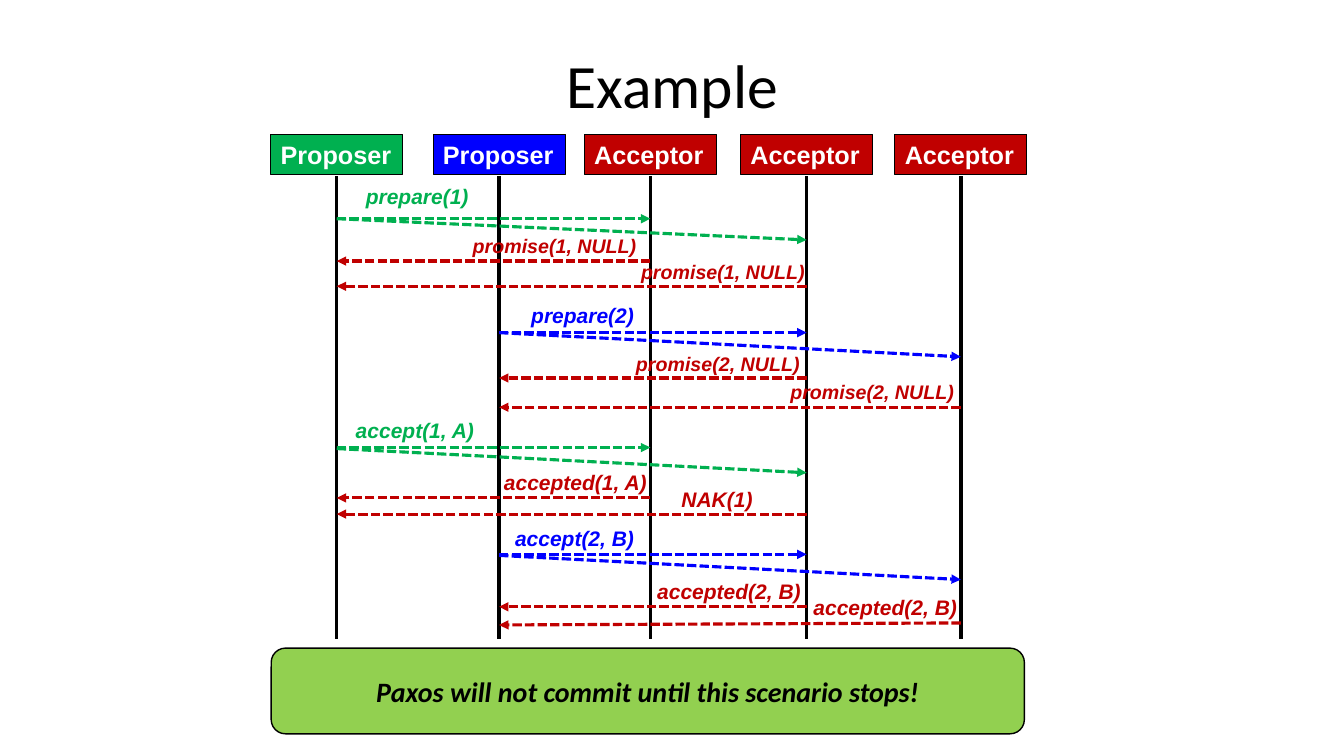
from dataclasses import dataclass

from lxml.etree import SubElement
from pptx import Presentation
from pptx.dml.color import RGBColor
from pptx.enum.dml import MSO_LINE
from pptx.enum.shapes import MSO_CONNECTOR, MSO_SHAPE
from pptx.enum.text import MSO_ANCHOR, MSO_AUTO_SIZE, PP_ALIGN
from pptx.oxml.ns import qn
from pptx.shapes.autoshape import Shape
from pptx.shapes.connector import Connector
from pptx.util import Inches, Pt

COLORS = {
    "black": "000000",
    "white": "FFFFFF",
    "green": "00B050",
    "blue": "0000FF",
    "red": "C00000",
    "lime": "92D050",
}
CELL = Inches(0.1)
HEADER_TOP, HEADER_WIDTH, HEADER_HEIGHT = 13.3, 13.1, 4
LIFELINE_TOP, LIFELINE_BOTTOM = 17.5, 63.4
CAPTION_HEIGHT = 3.5


@dataclass(frozen=True)
class Lane:
    role: str
    color: str
    column: float


@dataclass(frozen=True)
class Message:
    sender: int
    receiver: int
    row: float
    color: str
    drop: float = 0


@dataclass(frozen=True)
class Caption:
    text: str
    color: str
    column: float
    row: float
    width: float
    size: float = 15


LANES = [
    Lane("Proposer", "green", 33.4),
    Lane("Proposer", "blue", 49.5),
    Lane("Acceptor", "red", 64.5),
    Lane("Acceptor", "red", 80),
    Lane("Acceptor", "red", 95.3),
]
MESSAGES = [
    Message(0, 2, 21.7, "green"),
    Message(0, 3, 21.7, "green", 2.1),
    Message(2, 0, 25.9, "red"),
    Message(3, 0, 28.4, "red"),
    Message(1, 3, 33, "blue"),
    Message(1, 4, 33, "blue", 2.4),
    Message(3, 1, 37.5, "red"),
    Message(4, 1, 40.4, "red"),
    Message(0, 2, 44.4, "green"),
    Message(0, 3, 44.5, "green", 2.4),
    Message(2, 0, 49.4, "red"),
    Message(3, 0, 51, "red"),
    Message(1, 3, 55, "blue"),
    Message(1, 4, 55.1, "blue", 2.4),
    Message(3, 1, 60.2, "red"),
    Message(4, 1, 61.8, "red", 0.2),
]
CAPTIONS = [
    Caption("prepare(1)", "green", 35.3, 17.7, 12.9),
    Caption("promise(1, NULL)", "red", 45.9, 22.7, 18.3, 14),
    Caption("promise(1, NULL)", "red", 62.6, 25.3, 18.3, 14),
    Caption("prepare(2)", "blue", 51.7, 29.5, 12.9),
    Caption("promise(2, NULL)", "red", 62.1, 34.4, 18.3, 14),
    Caption("promise(2, NULL)", "red", 77.4, 37.2, 18.3, 14),
    Caption("accept(1, A)", "green", 34.3, 40.9, 13.9),
    Caption("accepted(1, A)", "red", 49, 46.1, 16.3),
    Caption("NAK(1)", "red", 66.6, 47.8, 9.2),
    Caption("accept(2, B)", "blue", 50.1, 51.6, 14),
    Caption("accepted(2, B)", "red", 64.2, 56.9, 16.3),
    Caption("accepted(2, B)", "red", 79.7, 58.5, 16.3),
]

deck = Presentation()
deck.slide_width, deck.slide_height = Inches(13.33), Inches(7.5)
page = deck.slides.add_slide(deck.slide_layouts[6])


def cells(*counts: float) -> list[int]:
    return [round(count * CELL) for count in counts]


def rgb(color: str) -> RGBColor:
    return RGBColor.from_string(COLORS[color])


def write(box: Shape, text: str, size: float, color: str, font: str = "Arial",
          bold: bool = True, italic: bool = False, centred: bool = False) -> None:
    frame = box.text_frame
    frame.word_wrap = centred
    frame.auto_size = MSO_AUTO_SIZE.NONE if centred else MSO_AUTO_SIZE.SHAPE_TO_FIT_TEXT
    frame.vertical_anchor = MSO_ANCHOR.MIDDLE if centred else MSO_ANCHOR.TOP
    para = frame.paragraphs[0]
    para.alignment = PP_ALIGN.CENTER if centred else PP_ALIGN.LEFT
    span = para.add_run()
    span.text = text
    span.font.name, span.font.size = font, Pt(size)
    span.font.bold, span.font.italic = bold, italic
    span.font.color.rgb = rgb(color)


def add_panel(kind: MSO_SHAPE, bounds: list[int], fill: str, weight: float) -> Shape:
    panel = page.shapes.add_shape(kind, *bounds)
    panel.shadow.inherit = False
    panel.fill.solid()
    panel.fill.fore_color.rgb = rgb(fill)
    panel.line.color.rgb = rgb("black")
    panel.line.width = Pt(weight)
    return panel


def add_line(ends: list[int], color: str, weight: float) -> Connector:
    line = page.shapes.add_connector(MSO_CONNECTOR.STRAIGHT, *ends)
    line.line.color.rgb = rgb(color)
    line.line.width = Pt(weight)
    SubElement(line._element.spPr, qn("a:effectLst"))
    return line


def draw_lane(lane: Lane) -> None:
    add_line(cells(lane.column, LIFELINE_TOP, lane.column, LIFELINE_BOTTOM), "black", 2.5)
    left = lane.column - HEADER_WIDTH / 2
    bounds = cells(left, HEADER_TOP, HEADER_WIDTH, HEADER_HEIGHT)
    header = add_panel(MSO_SHAPE.RECTANGLE, bounds, lane.color, 0.75)
    write(header, lane.role, 18, "white")


def draw_message(message: Message) -> None:
    start, end = LANES[message.sender].column, LANES[message.receiver].column
    ends = cells(start, message.row, end, message.row + message.drop)
    arrow = add_line(ends, message.color, 2.25)
    arrow.line.dash_style = MSO_LINE.SQUARE_DOT
    SubElement(arrow.line._get_or_add_ln(), qn("a:tailEnd"), type="triangle")


def draw_caption(caption: Caption) -> None:
    bounds = cells(caption.column, caption.row, caption.width, CAPTION_HEIGHT)
    box = page.shapes.add_textbox(*bounds)
    write(box, caption.text, caption.size, caption.color, italic=True)


def main() -> None:
    title = page.shapes.add_textbox(*cells(21.7, 2.5, 90, 12.5))
    write(title, "Example", 44, "black", "Calibri", bold=False, centred=True)
    title.text_frame.paragraphs[0].line_spacing = 0.9
    for lane in LANES:
        draw_lane(lane)
    for message in MESSAGES:
        draw_message(message)
    for caption in CAPTIONS:
        draw_caption(caption)
    verdict = add_panel(MSO_SHAPE.ROUNDED_RECTANGLE, cells(26.9, 64.3, 74.7, 8.5), "lime", 1)
    write(verdict, "Paxos will not commit until this scenario stops!", 20, "black",
          "Calibri", italic=True, centred=True)
    verdict.text_frame.margin_left = verdict.text_frame.margin_right = 0
    deck.save("out.pptx")


if __name__ == "__main__":
    main()
